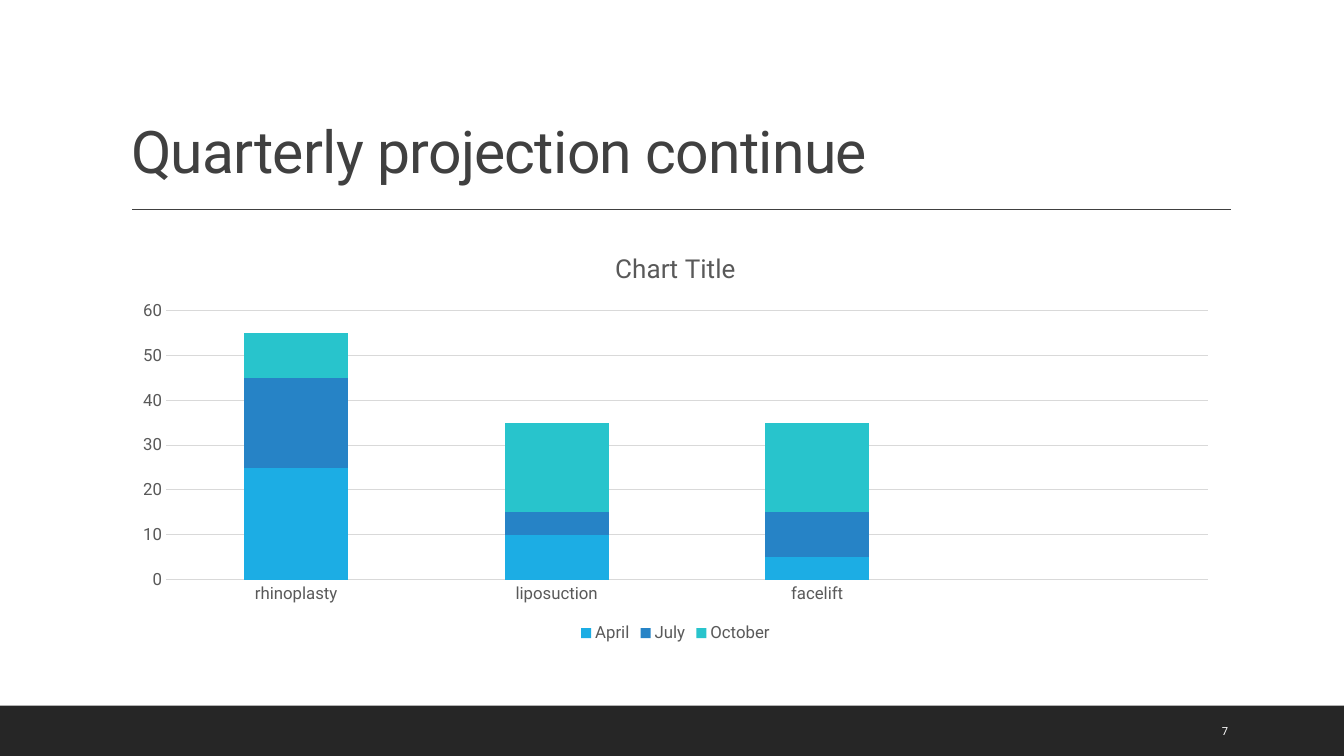
import pptx
import pptx.util
import pptx.chart.data
import pptx.dml.color
import pptx.enum.chart
import pptx.enum.shapes
import pptx.enum.text
import lxml.etree

Inches = pptx.util.Inches
Pt = pptx.util.Pt
RGBColor = pptx.dml.color.RGBColor
Anchor = pptx.enum.text.MSO_ANCHOR
Tick = pptx.enum.chart.XL_TICK_MARK

WHITE = RGBColor(0xFF, 0xFF, 0xFF)
BLACK = RGBColor(0x26, 0x26, 0x26)
DARK = RGBColor(0x40, 0x40, 0x40)
GREY = RGBColor(0x59, 0x59, 0x59)
PALE = RGBColor(0xD9, 0xD9, 0xD9)
SKY = RGBColor(0x1C, 0xAD, 0xE4)
BLUE = RGBColor(0x26, 0x83, 0xC6)
TEAL = RGBColor(0x28, 0xC4, 0xCC)

GROUPS = ["rhinoplasty", "liposuction", "facelift", ""]
MONTHS = [
    ("April", SKY, [25, 10, 5, None]),
    ("July", BLUE, [20, 5, 10, None]),
    ("October", TEAL, [10, 20, 20, None]),
]


def assign(item, values):
    for name, value in values.items():
        setattr(item, name, value)


class Deck:
    face = "Roboto"

    def __init__(self, wide, high):
        self.show = pptx.Presentation()
        assign(self.show, {"slide_width": Inches(wide), "slide_height": Inches(high)})
        self.slide = self.show.slides.add_slide(self.show.slide_layouts[5])

    def style(self, font, size, color):
        assign(font, {"name": self.face, "size": Pt(size), "bold": False})
        font.color.rgb = color

    def rule(self, line, color, width):
        line.color.rgb = color
        line.width = Pt(width)

    def letter(self, frame, text, size, color, anchor):
        """Put one styled, left-aligned paragraph in a text frame."""
        assign(frame, {
            "text": text,
            "word_wrap": True,
            "auto_size": pptx.enum.text.MSO_AUTO_SIZE.NONE,
            "vertical_anchor": anchor,
        })
        para = frame.paragraphs[0]
        para.alignment = pptx.enum.text.PP_ALIGN.LEFT
        self.style(para.runs[0].font, size, color)
        return para

    def title(self, text, left, top, width, height):
        head = self.slide.shapes.title
        assign(head, {"left": Inches(left), "top": Inches(top),
                      "width": Inches(width), "height": Inches(height)})
        para = self.letter(head.text_frame, text, 42, DARK, Anchor.BOTTOM)
        para.line_spacing = 0.9
        para.runs[0].font._element.set("spc", "-50")

    def label(self, text, *box):
        note = self.slide.shapes.add_textbox(*map(Inches, box))
        self.letter(note.text_frame, text, 8, WHITE, Anchor.MIDDLE)

    def band(self, color, *box):
        kind = pptx.enum.shapes.MSO_SHAPE.RECTANGLE
        bar = self.slide.shapes.add_shape(kind, *map(Inches, box))
        bar.shadow.inherit = False
        bar.fill.solid()
        bar.fill.fore_color.rgb = color
        bar.line.fill.background()

    def line(self, color, *ends):
        kind = pptx.enum.shapes.MSO_CONNECTOR.STRAIGHT
        link = self.slide.shapes.add_connector(kind, *map(Inches, ends))
        self.rule(link.line, color, 1)
        props = link._element.spPr
        tag = pptx.oxml.ns.qn("a:effectLst")
        lxml.etree.SubElement(props, tag)

    def chart(self, title, groups, series, *box):
        data = pptx.chart.data.CategoryChartData()
        data.categories = groups
        for name, _, values in series:
            data.add_series(name, values)
        kind = pptx.enum.chart.XL_CHART_TYPE.COLUMN_STACKED
        chart = self.slide.shapes.add_chart(kind, *map(Inches, box), data).chart
        self.style(chart.font, 12, GREY)

        frame = chart.chart_title.text_frame
        frame.text = title
        self.style(frame.paragraphs[0].runs[0].font, 18.6, GREY)

        plot = chart.plots[0]
        assign(plot, {"gap_width": 150, "overlap": 100, "vary_by_categories": False})
        for bars, (_, color, _) in zip(plot.series, series):
            bars.format.fill.solid()
            bars.format.fill.fore_color.rgb = color

        for axis in (chart.category_axis, chart.value_axis):
            assign(axis, {"major_tick_mark": Tick.NONE, "minor_tick_mark": Tick.NONE})
            self.style(axis.tick_labels.font, 12, GREY)
        self.rule(chart.category_axis.format.line, PALE, 0.75)
        scale = chart.value_axis
        assign(scale, {"minimum_scale": 0, "maximum_scale": 60, "major_unit": 10})
        scale.format.line.fill.background()
        self.rule(scale.major_gridlines.format.line, PALE, 0.75)

        chart.has_legend = True
        assign(chart.legend, {
            "position": pptx.enum.chart.XL_LEGEND_POSITION.BOTTOM,
            "include_in_layout": False,
        })
        self.style(chart.legend.font, 12, GREY)


def main():
    deck = Deck(13.33, 7.5)
    deck.band(BLACK, 0, 7, 13.33, 0.5)
    deck.line(DARK, 1.31, 2.08, 12.21, 2.08)
    deck.title("Quarterly projection continue", 1.2, 0.31, 11, 1.59)
    deck.chart("Chart Title", GROUPS, MONTHS, 1.2, 2.31, 11, 4.11)
    deck.label("7", 12.02, 7.05, 0.85, 0.4)
    deck.show.save("out.pptx")


if __name__ == "__main__":
    main()
